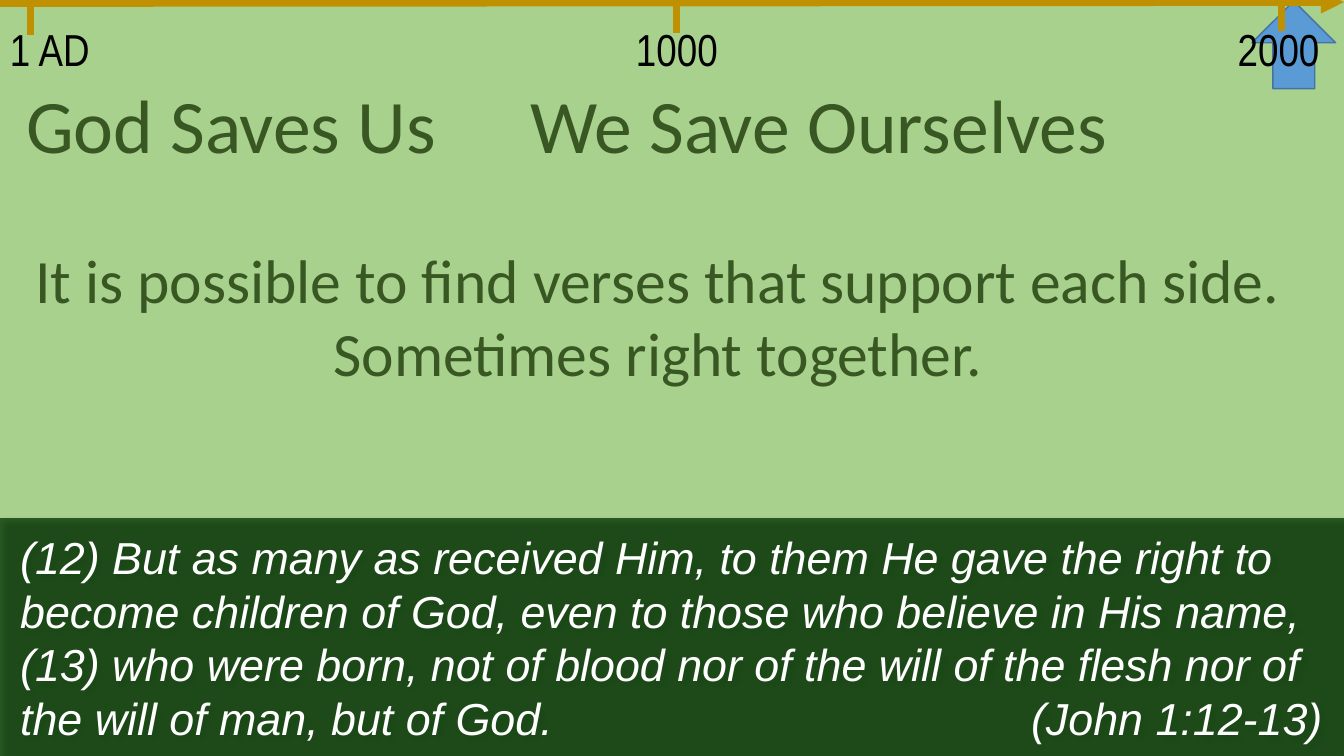
from dataclasses import dataclass

from lxml import etree
from pptx import Presentation
from pptx.dml.color import RGBColor
from pptx.enum.shapes import MSO_CONNECTOR, MSO_SHAPE
from pptx.enum.text import MSO_ANCHOR, PP_ALIGN
from pptx.oxml.ns import qn
from pptx.util import Inches, Pt

UP_ARROW, RECTANGLE = MSO_SHAPE.UP_ARROW, MSO_SHAPE.RECTANGLE
STRAIGHT = MSO_CONNECTOR.STRAIGHT
TOP, MIDDLE = MSO_ANCHOR.TOP, MSO_ANCHOR.MIDDLE
LEFT, CENTER = PP_ALIGN.LEFT, PP_ALIGN.CENTER


@dataclass(frozen=True)
class Theme:
    background: str = "A9D18E"
    gold: str = "BF9000"
    marker: str = "5B9BD5"
    marker_edge: str = "43739E"
    heading: str = "385723"
    panel: str = "003300"
    white: str = "FFFFFF"
    black: str = "000000"
    heading_font: str = "Calibri"
    verse_font: str = "Arial"
    date_font: str = "Arial Narrow"
    heading_size: int = 54
    statement_size: int = 44
    small_size: int = 32


def add_node(parent, tag, **attributes):
    return etree.SubElement(parent, qn(tag), attributes)


def add_shadow(effects, color, opacity, blur, distance, degrees):
    """Fill an effect list with one outer shadow; lengths in points."""
    shadow = add_node(effects, "a:outerShdw", blurRad=str(Pt(blur)), dist=str(Pt(distance)),
                      dir=str(degrees * 60000), algn="tl", rotWithShape="0")
    shade = add_node(shadow, "a:srgbClr", val=color)
    add_node(shade, "a:alpha", val=str(opacity * 1000))


class SlideBuilder:
    """Draws on one slide; every place is a percentage of the slide's size."""

    def __init__(self, deck, theme):
        self.deck, self.theme = deck, theme
        self.slide = deck.slides.add_slide(deck.slide_layouts[6])
        fill = self.slide.background.fill
        fill.solid()
        fill.fore_color.rgb = RGBColor.from_string(theme.background)

    def place(self, *shares):
        sides = (self.deck.slide_width, self.deck.slide_height)
        return [round(sides[i % 2] * share / 100) for i, share in enumerate(shares)]

    def shape(self, kind, area, color, edge=None):
        shape = self.slide.shapes.add_shape(kind, *self.place(*area))
        shape.shadow.inherit = False
        shape.fill.solid()
        shape.fill.fore_color.rgb = RGBColor.from_string(color)
        if edge:
            shape.line.color.rgb = RGBColor.from_string(edge)
            shape.line.width = Pt(1)
        else:
            shape.line.fill.background()
        return shape

    def panel(self, area, color, opacity):
        """Add a translucent rectangle with a soft shadow."""
        panel = self.shape(RECTANGLE, area, color)
        properties = panel.element.spPr
        shade = properties.find(qn("a:solidFill")).find(qn("a:srgbClr"))
        add_node(shade, "a:alpha", val=str(opacity * 1000))
        add_shadow(properties.find(qn("a:effectLst")), self.theme.black, 40, 4, 3, 45)
        return self.frame(panel, MIDDLE, 0.2, 0.1)

    def text_box(self, area):
        box = self.slide.shapes.add_textbox(*self.place(*area))
        return self.frame(box, TOP, 0.1, 0.05)

    def frame(self, box, anchor, side, edge):
        frame = box.text_frame
        frame.word_wrap = True
        frame.vertical_anchor = anchor
        frame.margin_left = frame.margin_right = Inches(side)
        frame.margin_top = frame.margin_bottom = Inches(edge)
        return frame

    def paragraph(self, frame, align=LEFT, spacing=1.0, before=0, tab=None):
        """Reuse the first paragraph while empty; tab is (inches, alignment)."""
        first = frame.paragraphs[0]
        para = frame.add_paragraph() if first.runs else first
        para.alignment = align
        para.line_spacing = spacing
        para.space_before = Pt(before)
        if tab:
            tabs = add_node(para._p.get_or_add_pPr(), "a:tabLst")
            add_node(tabs, "a:tab", pos=str(Inches(tab[0])), algn=tab[1])
        return para

    def span(self, para, text, size, font, color, italic=False, shadow=False):
        span = para.add_run()
        span.text = text
        span.font.size = Pt(size)
        span.font.italic = italic
        span.font.color.rgb = RGBColor.from_string(color)
        span.font.name = font
        if shadow:
            effects = etree.Element(qn("a:effectLst"))
            add_shadow(effects, self.theme.black, 100, 0, 2, 45)
            span.font._element.find(qn("a:solidFill")).addnext(effects)

    def line(self, start, end, width, arrow=False):
        line = self.slide.shapes.add_connector(STRAIGHT, *self.place(*start, *end))
        line.line.color.rgb = RGBColor.from_string(self.theme.gold)
        line.line.width = Pt(width)
        if arrow:
            add_node(line.line._get_or_add_ln(), "a:tailEnd", type="triangle")
        add_node(line._element.spPr, "a:effectLst")


def add_headings(builder):
    theme = builder.theme
    frame = builder.text_box((1.2, 12, 96.6, 44))
    style = {"font": theme.heading_font, "color": theme.heading, "shadow": True}
    para = builder.paragraph(frame, spacing=0.8, before=10, tab=(5, "l"))
    for text in ("God Saves Us ", "\t", "We Save Ourselves"):
        builder.span(para, text, theme.heading_size, **style)
    statements = (("It is possible to find verses that support each side. ", 63),
                  ("Sometimes right together. ", 10))
    for text, before in statements:
        para = builder.paragraph(frame, CENTER, 0.8, before)
        builder.span(para, text, theme.statement_size, **style)


def add_verse(builder):
    theme = builder.theme
    frame = builder.panel((0, 68.53, 100, 31.47), theme.panel, 75)
    para = builder.paragraph(frame, tab=(12.92, "r"))
    verse = ("(12) But as many as received Him, to them He gave the right to become "
             "children of God, even to those who believe in His name, (13) who were "
             "born, not of blood nor of the will of the flesh nor of the will of man, "
             "but of God. ")
    for text in (verse, "\t(John 1:12-13)"):
        builder.span(para, text, theme.small_size, theme.verse_font, theme.white, italic=True)


def add_timeline(builder):
    theme = builder.theme
    builder.line((0, 0.4), (100, 0.27), 5.5, arrow=True)
    dates = (("1 AD", 2.25, 0.9, 0), ("1000", 50.33, 0.7, 46.58), ("2000", 95.33, 0.4, 91.35))
    for date, tick, top, left in dates:
        builder.line((tick, top), (tick, top + 3.7), 5)
        para = builder.paragraph(builder.text_box((left, 2.27, 8.25, 8.53)))
        builder.span(para, date, theme.small_size, theme.date_font, theme.black)


def main():
    deck = Presentation()
    deck.slide_width, deck.slide_height = Inches(13.33), Inches(7.5)
    theme = Theme()
    builder = SlideBuilder(deck, theme)
    builder.shape(UP_ARROW, (93.15, 0.13, 6.23, 11.6), theme.marker, theme.marker_edge)
    add_headings(builder)
    add_verse(builder)
    add_timeline(builder)
    deck.save("out.pptx")


if __name__ == "__main__":
    main()
